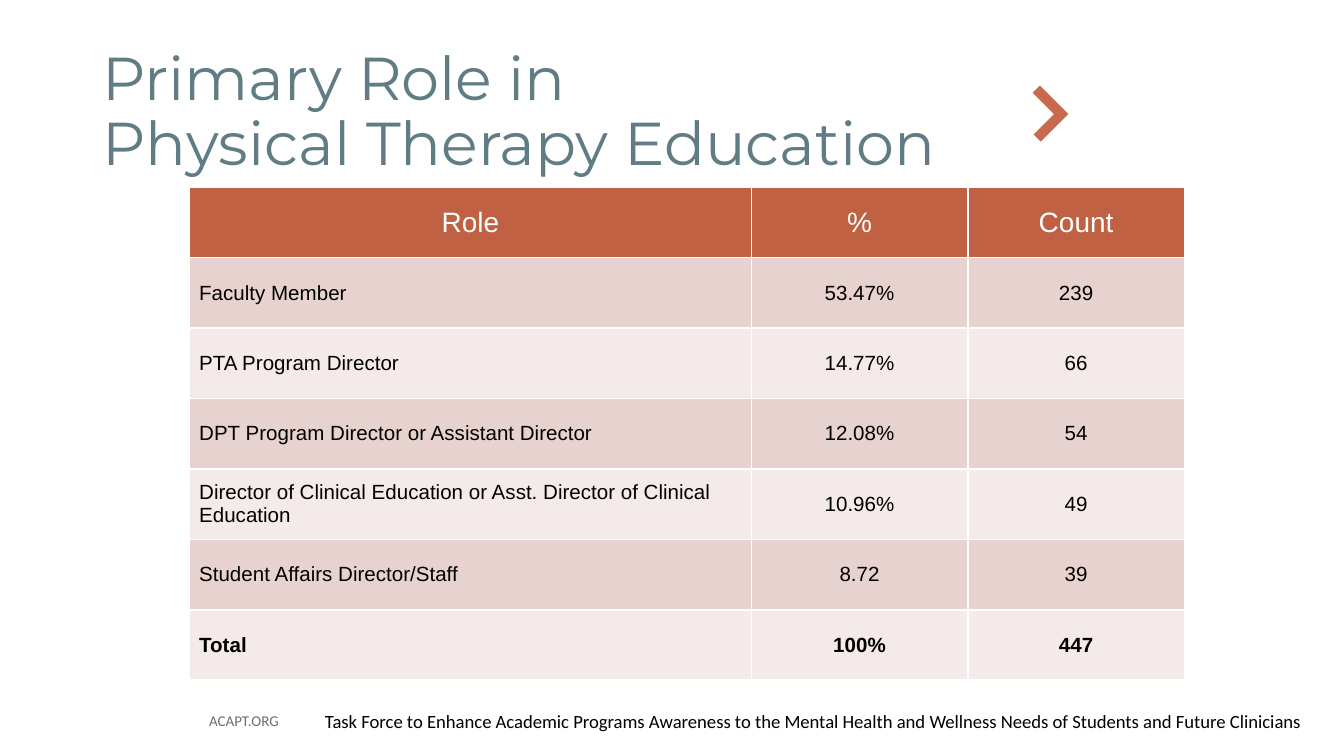
from copy import deepcopy
from pptx import Presentation
from pptx.dml.color import RGBColor as RGB
from pptx.enum.shapes import MSO_SHAPE as Shape
from pptx.enum.text import MSO_ANCHOR as Anchor, PP_ALIGN as Align
from pptx.oxml.ns import qn
from pptx.util import Pt

HUES = {
    "title": "607C84", "mark": "C9694F", "head": "C06143",
    "dark": "E8D2CF", "pale": "F4EAE9", "white": "FFFFFF",
    "black": "000000", "gray": "6D6E70",
}
ROLES = [
    ("Role", "%", "Count"),
    ("Faculty Member", "53.47%", "239"),
    ("PTA Program Director", "14.77%", "66"),
    ("DPT Program Director or Assistant Director", "12.08%", "54"),
    ("Director of Clinical Education or Asst. Director of Clinical Education", "10.96%", "49"),
    ("Student Affairs Director/Staff", "8.72", "39"),
    ("Total", "100%", "447"),
]


def write(frame, text, size, font="Arial", hue="black", bold=False, align=Align.LEFT, lead=None):
    """Put one formatted paragraph into a text frame."""
    para = frame.paragraphs[0]
    para.text = text
    para.alignment = align
    para.line_spacing = lead
    for run in para.runs:
        run.font.name = font
        run.font.size = Pt(size)
        run.font.bold = bold
        run.font.color.rgb = RGB.from_string(HUES[hue])
    for gap in para._p.findall(qn("a:br")):
        gap.append(deepcopy(para.runs[0]._r.rPr))


def inset(item):
    """Set the narrow margins shared by the title, cells and site name."""
    item.margin_left = item.margin_right = Pt(5.2)
    item.margin_top = item.margin_bottom = Pt(2.6)
    item.vertical_anchor = Anchor.MIDDLE


class Deck:
    """Hold the style and the current slide."""

    def __init__(self, wide, high):
        """Start a deck with one title-only slide."""
        self.file = Presentation()
        self.file.slide_width, self.file.slide_height = Pt(wide), Pt(high)
        self.slide = self.file.slides.add_slide(self.file.slide_layouts[5])
        self.items = self.slide.shapes

    def title(self, text, box):
        """Move and format the title placeholder."""
        name = self.items.title
        name.left, name.top, name.width, name.height = map(Pt, box)
        inset(name.text_frame)
        name.text_frame.word_wrap = True
        write(name.text_frame, text, 32.4, "Montserrat", "title", lead=0.9)

    def label(self, text, box, size, tight=False, **form):
        """Add a line of footer text."""
        frame = self.items.add_textbox(*map(Pt, box)).text_frame
        frame.word_wrap = True
        if tight:
            inset(frame)
        write(frame, text, size, "Calibri", **form)

    def arrow(self, box):
        """Add a chevron made from a turned corner."""
        mark = self.items.add_shape(Shape.CORNER, *map(Pt, box))
        mark.adjustments[0] = mark.adjustments[1] = 0.26
        mark.rotation = 225
        mark.shadow.inherit = False
        mark.fill.solid()
        mark.fill.fore_color.rgb = RGB.from_string(HUES["mark"])
        mark.line.fill.background()

    def table(self, rows, left, top, widths, high):
        """Add a banded table with a header and a bold last row."""
        box = (left, top, sum(widths), high * len(rows))
        grid = self.items.add_table(len(rows), len(widths), *map(Pt, box)).table
        for col, wide in zip(grid.columns, widths):
            col.width = Pt(wide)
        for r, row in enumerate(rows):
            grid.rows[r].height = Pt(high)
            head = r == 0
            fill = "head" if head else "dark" if r % 2 else "pale"
            for c, text in enumerate(row):
                cell = grid.cell(r, c)
                inset(cell)
                cell.fill.solid()
                cell.fill.fore_color.rgb = RGB.from_string(HUES[fill])
                write(cell.text_frame, text, 15 if head else 11,
                      hue="white" if head else "black", bold=r == len(rows) - 1,
                      align=Align.CENTER if head or c else Align.LEFT)


def main():
    """Build and save the slide."""
    deck = Deck(720, 405)
    deck.label("ACAPT.ORG", (102, 375.4, 52.6, 21.6), 8, tight=True, hue="gray", align=Align.RIGHT)
    deck.label("Task Force to Enhance Academic Programs Awareness to the Mental Health "
               "and Wellness Needs of Students and Future Clinicians", (167, 376.8, 552, 19.4), 10)
    deck.title("Primary Role in \vPhysical Therapy Education", (49.7, 21.6, 620.6, 78.5))
    deck.arrow((546.5, 50.4, 21.6, 20.9))
    deck.table(ROLES, 101.5, 100.3, (301, 116, 116), 37.75)
    deck.file.save("out.pptx")


if __name__ == "__main__":
    main()
